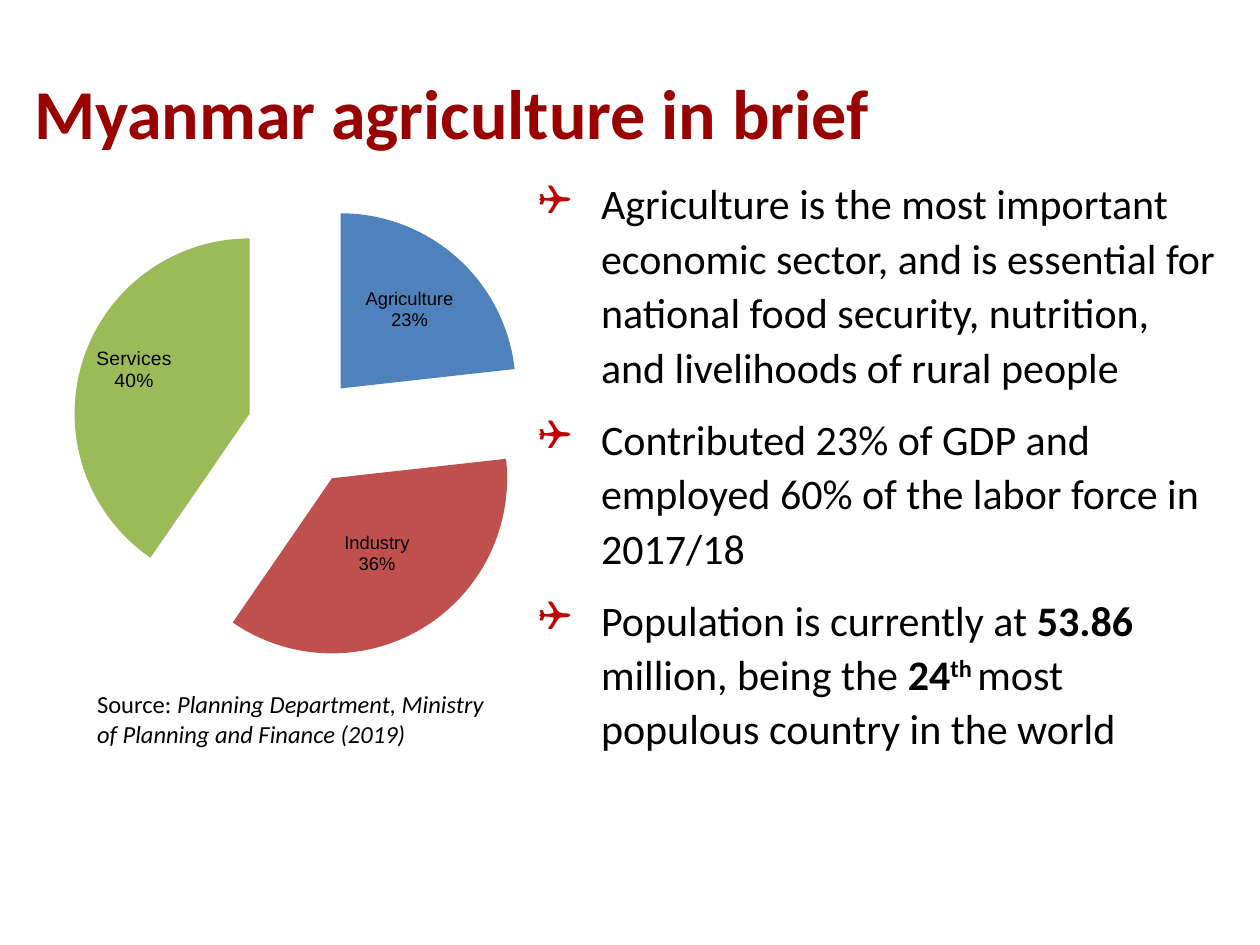
import pptx
import pptx.chart.data
import pptx.dml.color
import pptx.enum.chart
import pptx.enum.text
import pptx.oxml
import pptx.oxml.ns
import pptx.util
from pptx.util import Inches

COLORS = {
    "title": "990000", "bullet": "C00000", "text": "000000",
    "Agriculture": "4F81BD", "Industry": "C0504D", "Services": "9BBB59",
}


def rgb(name):
    return pptx.dml.color.RGBColor.from_string(COLORS[name])


def xml(tag, content=""):
    prefix = tag.split(":")[0].split()[0]
    namespace = pptx.oxml.ns.nsdecls(prefix)
    return pptx.oxml.parse_xml(f"<{tag} {namespace}>{content}</{tag.split()[0]}>")


deck = pptx.Presentation()
deck.slide_width, deck.slide_height = Inches(10), Inches(7.5)
page = deck.slides.add_slide(deck.slide_layouts[3])
title, facts, source = page.placeholders

# Placeholder positions
for box, bounds in (
    (title, (0.17, 0.25, 8.33, 1.27)),
    (facts, (4.17, 1.33, 5.58, 4.75)),
    (source, (0.67, 5.42, 3.29, 0.76)),
):
    box.left, box.top, box.width, box.height = map(Inches, bounds)
    box.text_frame.auto_size = pptx.enum.text.MSO_AUTO_SIZE.NONE

# Title
title.text_frame.text = "Myanmar agriculture in brief"
title.text_frame.vertical_anchor = pptx.enum.text.MSO_ANCHOR.MIDDLE
para = title.text_frame.paragraphs[0]
para.alignment = pptx.enum.text.PP_ALIGN.LEFT
para.font.name, para.font.size, para.font.bold = "Calibri", pptx.util.Pt(40), True
para.font.color.rgb = rgb("title")

# Bulleted facts: each span is (text, bold, superscript)
fact_spans = [
    [("Agriculture is the most important economic sector, and is essential for "
      "national food security, nutrition, and livelihoods of rural people", False, False)],
    [("Contributed 23% of GDP and employed 60% of the labor force in 2017/18", False, False)],
    [("Population is currently at ", False, False), ("53.86", True, False),
     (" million, being the ", False, False), ("24", True, False), ("th ", True, True),
     ("most populous country in the world", False, False)],
]
for index, spans in enumerate(fact_spans):
    frame = facts.text_frame
    para = frame.add_paragraph() if index else frame.paragraphs[0]
    para.line_spacing = 1.08
    para.space_before, para.space_after = pptx.util.Pt(0), pptx.util.Pt(10.1)
    para.font.name, para.font.size = "Calibri", pptx.util.Pt(24)
    para.font.color.rgb = rgb("text")
    for text, bold, superscript in spans:
        span = para.add_run()
        span.text, span.font.bold = text, bold
        if superscript:
            span.font._element.set("baseline", "30000")
    properties = para._p.get_or_add_pPr()
    properties.set("marL", str(Inches(0.5)))
    properties.set("indent", str(Inches(-0.5)))
    bullet_parts = [
        xml("a:buClr", f'<a:srgbClr val="{COLORS["bullet"]}"/>'),
        xml("a:buFont typeface='Wingdings'"),
        xml("a:buChar char='❑'"),
    ]
    for part in bullet_parts:
        properties.insert_element_before(part, "a:tabLst", "a:defRPr", "a:extLst")

# Source note
para = source.text_frame.paragraphs[0]
para.font.name, para.font.size = "Calibri", pptx.util.Pt(14)
para.font.color.rgb = rgb("text")
para.add_run().text = "Source: "
span = para.add_run()
span.text = "Planning Department, Ministry of Planning and Finance (2019)"
span.font.italic = True
properties = para._p.get_or_add_pPr()
properties.set("marL", "0")
properties.set("indent", "0")
properties.insert_element_before(xml("a:buNone"), "a:tabLst", "a:defRPr", "a:extLst")

# Exploded pie: label size and label offset for each sector
sectors = [
    ("Agriculture", 23, 10.5, 0.02, -0.03),
    ("Industry", 36, 10.5, 0, 0),
    ("Services", 40, 11, -0.06, -0.04),
]
data = pptx.chart.data.CategoryChartData()
data.categories = [sector[0] for sector in sectors]
data.add_series("Series 1", [sector[1] for sector in sectors])
chart = page.shapes.add_chart(
    pptx.enum.chart.XL_CHART_TYPE.PIE,
    Inches(0.25), Inches(1.58), Inches(4.23), Inches(3.67), data,
).chart
chart.has_legend = chart.has_title = False
chart.font.name, chart.font.size = "Arial", pptx.util.Pt(12)
chart.font.color.rgb = rgb("text")
plot = chart.plots[0]
plot.vary_by_categories = True
series = plot.series[0]
labels = series.data_labels
labels.show_category_name = labels.show_percentage = True
labels.show_value = False

for index, (name, value, size, dx, dy) in enumerate(sectors):
    point = series.points[index]
    point.format.fill.solid()
    point.format.fill.fore_color.rgb = rgb(name)
    label = point.data_label
    label.font.size = pptx.util.Pt(size)
    label.font.name = "Arial"
    label.font.color.rgb = rgb("text")
    label.position = pptx.enum.chart.XL_LABEL_POSITION.CENTER
    element = labels._element.findall(pptx.oxml.ns.qn("c:dLbl"))[index]
    for flag, shown in (("showVal", "0"), ("showCatName", "1"), ("showPercent", "1")):
        element.find(pptx.oxml.ns.qn(f"c:{flag}")).set("val", shown)
    if dx or dy:
        element.insert(1, xml("c:layout", f'<c:manualLayout><c:x val="{dx}"/>'
                                          f'<c:y val="{dy}"/></c:manualLayout>'))

first_point = series._element.find(pptx.oxml.ns.qn("c:dPt"))
first_point.addprevious(xml("c:explosion val='32'"))

# Plot area fills the chart frame
area = chart._chartSpace.chart.plotArea
for layout in area.findall(pptx.oxml.ns.qn("c:layout")):
    area.remove(layout)
area.insert(0, xml("c:layout", '<c:manualLayout><c:layoutTarget val="inner"/>'
                   '<c:xMode val="edge"/><c:yMode val="edge"/><c:x val="0.02"/>'
                   '<c:y val="0"/><c:w val="0.98"/><c:h val="1"/></c:manualLayout>'))

deck.save("out.pptx")
